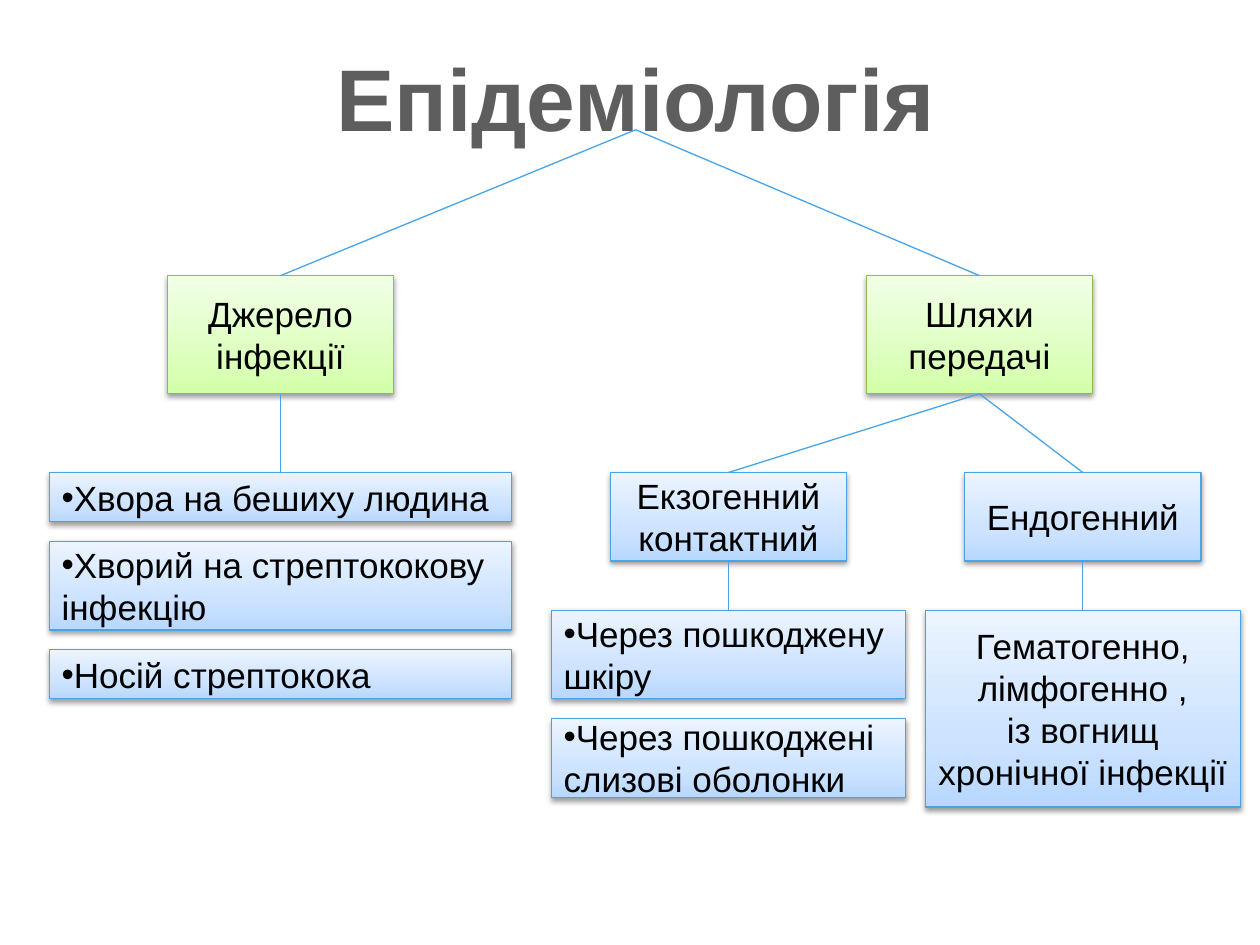
from dataclasses import dataclass

from pptx import Presentation, oxml
from pptx import util as u
from pptx.dml import color
from pptx.enum import shapes, text
from pptx.oxml import ns

COLORS = {"title": "5E5E5E", "text": "000000", "green": "90BE4E", "blue": "48A4E9"}
GRADIENTS = {
    "green": {0: "D2FFA6", 35: "DEFFC0", 100: "F2FFE7"},
    "blue": {0: "B8D8FF", 35: "CDE3FF", 100: "ECF4FF"},
}
FONT = "Arial"
COLUMNS = 128


@dataclass
class Box:
    name: str
    column: int
    row: int
    columns: int
    rows: int
    wording: str
    tone: str = "blue"
    bullet: bool = False


BOXES = [
    Box("source", 17, 28, 23, 12, "Джерело інфекції", "green"),
    Box("routes", 88, 28, 23, 12, "Шляхи передачі", "green"),
    Box("exogenous", 62, 48, 24, 9, "Екзогенний\nконтактний"),
    Box("endogenous", 98, 48, 24, 9, "Ендогенний"),
    Box("patient", 5, 48, 47, 5, "Хвора на бешиху людина", bullet=True),
    Box("infected", 5, 55, 47, 9, "Хворий на стрептококову інфекцію", bullet=True),
    Box("carrier", 5, 66, 47, 5, "Носій стрептокока", bullet=True),
    Box("skin", 56, 62, 36, 9, "Через пошкоджену шкіру", bullet=True),
    Box("mucosa", 56, 73, 36, 8, "Через пошкоджені слизові оболонки", bullet=True),
    Box("internal", 94, 62, 32, 20, "Гематогенно, лімфогенно ,\nіз вогнищ хронічної інфекції"),
]
LINKS = [
    ("title", "source"),
    ("title", "routes"),
    ("source", "patient"),
    ("routes", "exogenous"),
    ("routes", "endogenous"),
    ("endogenous", "internal"),
    ("exogenous", "skin"),
]


def rgb(name: str) -> color.RGBColor:
    return color.RGBColor.from_string(COLORS[name])


def xml(markup: str):
    return oxml.parse_xml(markup.replace(">", f" {ns.nsdecls('a')}>", 1))


def style_font(font, size: int, tone: str, bold: bool = False) -> None:
    font.name = FONT
    font.size = u.Pt(size)
    font.bold = bold
    font.color.rgb = rgb(tone)


def paint(shape, tone: str) -> None:
    shape.fill.gradient()
    shape.fill.gradient_angle = 90
    stops = shape._element.spPr.find(".//" + ns.qn("a:gsLst"))
    stops.clear()
    for position, value in GRADIENTS[tone].items():
        stops.append(xml(f'<a:gs pos="{position * 1000}"><a:srgbClr val="{value}"/></a:gs>'))
    shape.line.color.rgb = rgb(tone)
    shape.line.width = u.Pt(0.75)
    shape.shadow.inherit = False
    shape._element.spPr.find(ns.qn("a:effectLst")).append(xml(
        '<a:outerShdw blurRad="40000" dist="20000" dir="5400000" rotWithShape="0">'
        '<a:srgbClr val="000000"><a:alpha val="38000"/></a:srgbClr></a:outerShdw>'))


def draw_box(page, box: Box, cell: float):
    area = [round(cell * n) for n in (box.column, box.row, box.columns, box.rows)]
    shape = page.shapes.add_shape(shapes.MSO_SHAPE.RECTANGLE, *area)
    paint(shape, box.tone)
    frame = shape.text_frame
    frame.word_wrap = True
    frame.vertical_anchor = text.MSO_ANCHOR.MIDDLE
    frame.text = box.wording
    for para in frame.paragraphs:
        para.alignment = text.PP_ALIGN.LEFT if box.bullet else text.PP_ALIGN.CENTER
        if box.bullet:
            para._p.get_or_add_pPr().append(xml('<a:buFont typeface="Arial"/>'.replace("/>", "></a:buFont>")))
            para._p.get_or_add_pPr().append(xml('<a:buChar char="•"></a:buChar>'))
        for span in para.runs:
            style_font(span.font, 20, "text")
    return shape


def draw_link(page, parent, child) -> None:
    link = page.shapes.add_connector(shapes.MSO_CONNECTOR.STRAIGHT, 0, 0, 0, 0)
    link.begin_connect(parent, 2)
    link.end_connect(child, 0)
    link.line.color.rgb = rgb("blue")
    link.line.width = u.Pt(0.75)
    link._element.spPr.append(xml("<a:effectLst></a:effectLst>"))


def draw_title(page):
    title = page.shapes.title
    title.left, title.top, title.width, title.height = map(u.Inches, (1.17, 0.5, 7.75, 0.53))
    frame = title.text_frame
    frame.text = "Епідеміологія"
    frame.auto_size = text.MSO_AUTO_SIZE.NONE
    frame.vertical_anchor = text.MSO_ANCHOR.MIDDLE
    para = frame.paragraphs[0]
    para.alignment = text.PP_ALIGN.CENTER
    style_font(para.runs[0].font, 50, "title", True)
    return title


def main() -> None:
    deck = Presentation()
    deck.slide_width, deck.slide_height = u.Inches(10), u.Inches(7.5)
    page = deck.slides.add_slide(deck.slide_layouts[5])
    nodes = {"title": draw_title(page)}
    for box in BOXES:
        nodes[box.name] = draw_box(page, box, deck.slide_width / COLUMNS)
    for parent, child in LINKS:
        draw_link(page, nodes[parent], nodes[child])
    deck.save("out.pptx")


if __name__ == "__main__":
    main()
